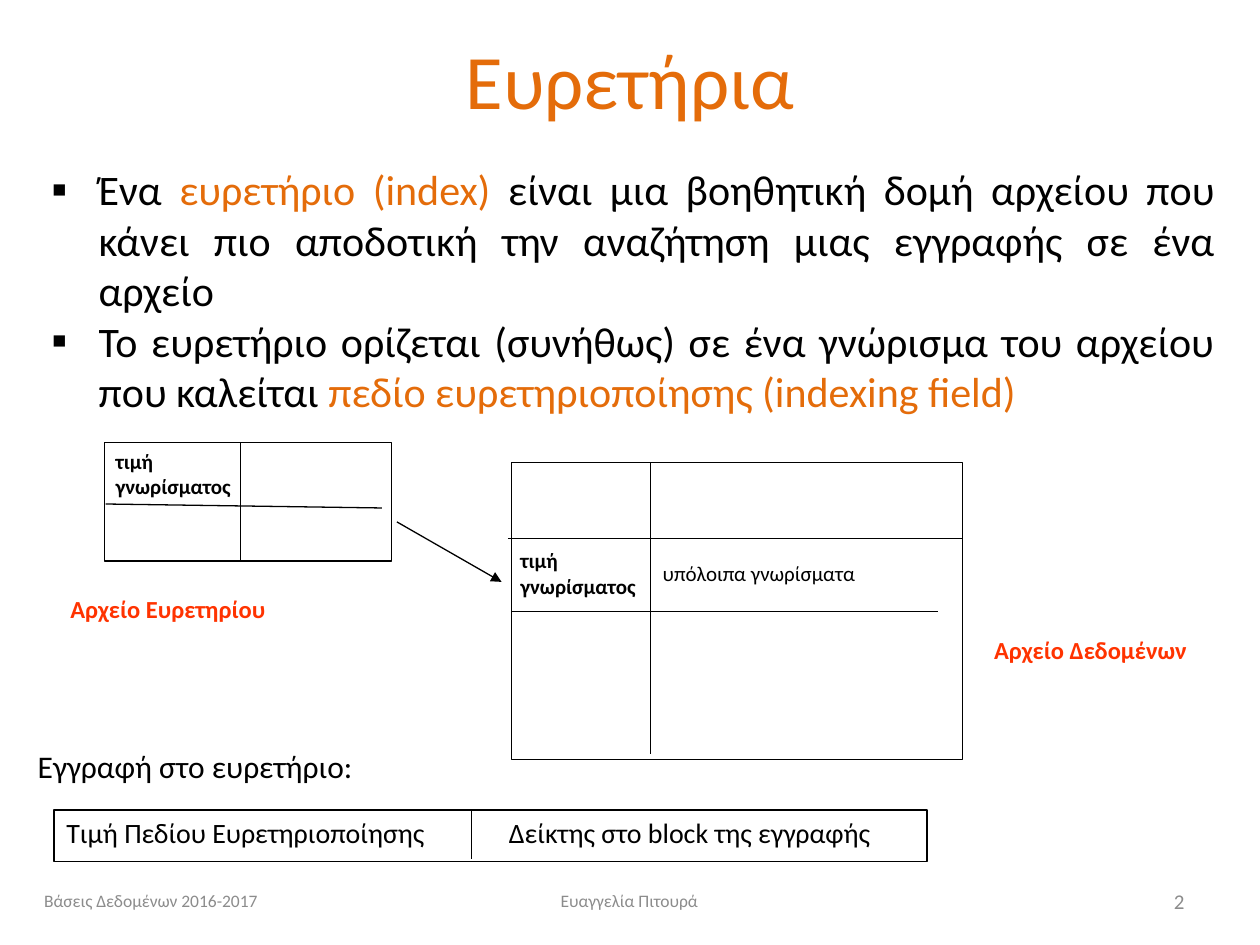
"""Build the slide that introduces database indexes."""
import dataclasses

import lxml.etree
import pptx
import pptx.dml.color
import pptx.enum.shapes
import pptx.enum.text
import pptx.oxml.ns
import pptx.util

Cm = pptx.util.Cm
Align = pptx.enum.text.PP_ALIGN
Anchor = pptx.enum.text.MSO_ANCHOR


@dataclasses.dataclass(frozen=True)
class Theme:
    font: str = "Calibri"
    ink: str = "000000"
    accent: str = "E46C0A"
    caption: str = "FF3300"
    muted: str = "8C8C8C"
    title_size: int = 44
    body_size: int = 24
    lead_size: int = 18
    record_size: int = 16
    caption_size: int = 14
    cell_size: int = 12
    footer_size: int = 10
    line: float = 0.75
    frame: float = 1


def rgb(value):
    return pptx.dml.color.RGBColor.from_string(value)


def add_xml(parent, tag, **attrs):
    return lxml.etree.SubElement(parent, pptx.oxml.ns.qn(tag), **attrs)


class SlideBuilder:
    def __init__(self, slide, theme):
        self.s = slide
        self.theme = theme

    def style(self, font, size, color, bold=False):
        font.name = self.theme.font
        font.size = pptx.util.Pt(size)
        font.bold = bold
        font.color.rgb = rgb(color)

    def frame(self, box, anchor=Anchor.TOP, wrap=True):
        tf = self.s.shapes.add_textbox(*map(Cm, box)).text_frame
        tf.word_wrap = wrap
        tf.vertical_anchor = anchor
        return tf

    def text(self, box, text, size, color=None, bold=False,
             align=Align.LEFT, anchor=Anchor.TOP, wrap=True):
        p = self.frame(box, anchor, wrap).paragraphs[0]
        p.text = text
        p.alignment = align
        self.style(p.font, size, color or self.theme.ink, bold)

    def bullets(self, box, items):
        tf = self.frame(box)
        for i, item in enumerate(items):
            p = tf.add_paragraph() if i else tf.paragraphs[0]
            p.alignment = Align.JUSTIFY
            pPr = p._p.get_or_add_pPr()
            pPr.set("marL", str(Cm(0.95)))
            pPr.set("indent", str(Cm(-0.95)))
            add_xml(add_xml(pPr, "a:buClr"), "a:srgbClr", val=self.theme.ink)
            add_xml(pPr, "a:buSzPct", val="105000")
            add_xml(pPr, "a:buFont", typeface=self.theme.font)
            add_xml(pPr, "a:buChar", char="▪")
            for text, color in item:
                r = p.add_run()
                r.text = text
                self.style(r.font, self.theme.body_size, color)

    def rect(self, box, width):
        sp = self.s.shapes.add_shape(
            pptx.enum.shapes.MSO_SHAPE.RECTANGLE, *map(Cm, box))
        sp.shadow.inherit = False
        sp.fill.background()
        sp.line.color.rgb = rgb(self.theme.ink)
        sp.line.width = pptx.util.Pt(width)

    def line(self, ends, arrow=False):
        c = self.s.shapes.add_connector(
            pptx.enum.shapes.MSO_CONNECTOR.STRAIGHT, *map(Cm, ends))
        c.line.color.rgb = rgb(self.theme.ink)
        c.line.width = pptx.util.Pt(self.theme.line)
        if arrow:
            add_xml(c.line._get_or_add_ln(), "a:tailEnd", type="triangle")
        add_xml(c._element.spPr, "a:effectLst")


def main():
    prs = pptx.Presentation()
    prs.slide_width, prs.slide_height = Cm(25.4), Cm(19.05)
    t = Theme()
    b = SlideBuilder(prs.slides.add_slide(prs.slide_layouts[6]), t)

    b.text((1.27, 0, 22.86, 3.18), "Ευρετήρια", t.title_size, t.accent,
           align=Align.CENTER, anchor=Anchor.MIDDLE)
    b.bullets((0.79, 3.18, 23.95, 5.38), [
        [("Ένα ", t.ink), ("ευρετήριο (index) ", t.accent),
         ("είναι μια βοηθητική δομή αρχείου που κάνει πιο αποδοτική την "
          "αναζήτηση μιας εγγραφής σε ένα αρχείο", t.ink)],
        [("Το ευρετήριο ορίζεται (συνήθως) σε ένα γνώρισμα του αρχείου που "
          "καλείται ", t.ink),
         ("πεδίο ευρετηριοποίησης (indexing field)", t.accent)],
    ])

    index_file = (2.11, 8.92, 5.79, 2.39)
    data_file = (10.31, 9.32, 9.09, 5.99)
    record = (1.09, 16.33, 17.6, 1.04)
    for box, width in ((index_file, t.line), (data_file, t.line),
                       (record, t.frame)):
        b.rect(box, width)
    for ends in (
        (2.13, 10.16, 7.7, 10.24),
        (4.85, 8.92, 4.85, 11.28),
        (13.11, 9.32, 13.11, 15.19),
        (10.24, 10.85, 19.41, 10.85),
        (10.31, 12.32, 18.9, 12.32),
        (9.5, 16.33, 9.5, 17.32),
    ):
        b.line(ends)
    b.line((8, 10.52, 10.11, 11.73), arrow=True)

    for box in ((2.08, 8.92, 3.2, 1.27), (10.24, 10.92, 3.4, 1.27)):
        b.text(box, "τιμή γνωρίσματος", t.cell_size, bold=True)
    b.text((13.11, 11.18, 7.21, 0.76), "υπόλοιπα γνωρίσματα", t.cell_size)
    for box, text in (
        ((1.17, 11.86, 5.79, 0.84), "Αρχείο Ευρετηρίου"),
        ((19.79, 12.67, 5.33, 0.84), "Αρχείο Δεδομένων"),
    ):
        b.text(box, text, t.caption_size, t.caption, bold=True)

    b.text((0.51, 14.94, 15.01, 1.02), "Εγγραφή στο ευρετήριο:", t.lead_size)
    for left, width, text in (
        (1.09, 7.85, "Τιμή Πεδίου Ευρετηριοποίησης"),
        (10.01, 7.92, "Δείκτης στο block της εγγραφής"),
    ):
        b.text((left, 16.31, width, 0.94), text, t.record_size, wrap=False)

    for left, width, text, size, align in (
        (0.64, 5.92, "Βάσεις Δεδομένων 2016-2017", t.footer_size, Align.LEFT),
        (8.66, 8.05, "Ευαγγελία Πιτουρά", t.footer_size, Align.CENTER),
        (18.21, 5.92, "2", t.cell_size, Align.RIGHT),
    ):
        b.text((left, 17.65, width, 1.02), text, size, t.muted,
               align=align, anchor=Anchor.MIDDLE)

    prs.save("out.pptx")


if __name__ == "__main__":
    main()
